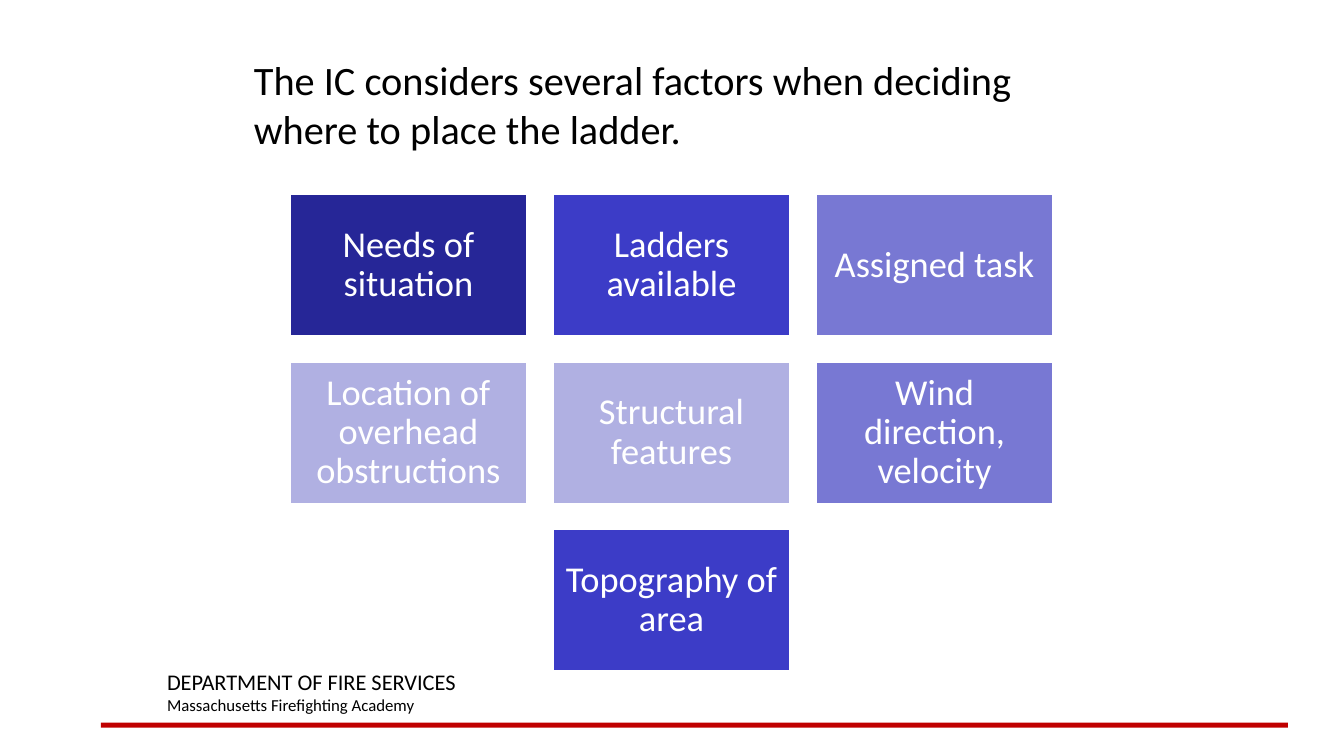
"""Build the slide on factors in placing a ladder."""
import pptx
import pptx.util
import pptx.dml.color
import pptx.enum.shapes
import pptx.enum.text

Cm = pptx.util.Cm
Pt = pptx.util.Pt
ALIGN = pptx.enum.text.PP_ALIGN
ANCHOR = pptx.enum.text.MSO_ANCHOR

TITLE = "The IC considers several factors when deciding where to place the ladder."
ROWS = [
    [("Needs of situation", "navy"), ("Ladders available", "blue"), ("Assigned task", "mid")],
    [("Location of overhead obstructions", "pale"), ("Structural features", "pale"),
     ("Wind direction, velocity", "mid")],
    [("Topography of area", "blue")],
]
FOOT = [("DEPARTMENT OF FIRE SERVICES", "head"), ("Massachusetts Firefighting Academy", "small")]

THEME = {
    "font": "Calibri",
    "color": {"black": "000000", "white": "FFFFFF", "red": "C00000", "navy": "262697",
              "blue": "3C3CC7", "mid": "7878D3", "pale": "B0B0E2"},
    "size": {"title": 28.8, "card": 26, "head": 16, "small": 12},
}

WIDE, HIGH = 33.87, 19.05
COLS = 3
LEFT, TOP = 7.29, 4.88
CARD_W, CARD_H, GAP_X, GAP_Y = 6.01, 3.61, 0.62, 0.61


def color(name):
    """Return the theme color of this name."""
    return pptx.dml.color.RGBColor.from_string(THEME["color"][name])


def write(shape, lines, ink="black", align=ALIGN.LEFT, anchor=ANCHOR.TOP,
          inset=(0.25, 0.13, 0.25, 0.13), pitch=None):
    """Fill a shape with lines of (text, size name)."""
    frame = shape.text_frame
    frame.word_wrap = True
    frame.vertical_anchor = anchor
    (frame.margin_left, frame.margin_top,
     frame.margin_right, frame.margin_bottom) = map(Cm, inset)
    for i, (text, size) in enumerate(lines):
        para = frame.add_paragraph() if i else frame.paragraphs[0]
        para.alignment = align
        para.line_spacing = pitch
        run = para.add_run()
        run.text = text
        run.font.name = THEME["font"]
        run.font.size = Pt(THEME["size"][size])
        run.font.color.rgb = color(ink)


def block(slide, box, fill, line=None):
    """Add a plain box with an optional line color."""
    shape = slide.shapes.add_shape(pptx.enum.shapes.MSO_SHAPE.RECTANGLE, *map(Cm, box))
    shape.shadow.inherit = False
    shape.fill.solid()
    shape.fill.fore_color.rgb = color(fill)
    if line:
        shape.line.color.rgb = color(line)
        shape.line.width = Pt(2)
    else:
        shape.line.fill.background()
    return shape


def main():
    """Make the slide and save it."""
    deck = pptx.Presentation()
    deck.slide_width, deck.slide_height = Cm(WIDE), Cm(HIGH)
    slide = deck.slides.add_slide(deck.slide_layouts[6])

    block(slide, (2.54, 18.21, 29.92, 0.13), "red")
    foot = slide.shapes.add_textbox(Cm(3.96), Cm(16.71), Cm(14.4), Cm(1.45))
    write(foot, FOOT)
    title = slide.shapes.add_textbox(Cm(6.15), Cm(1.27), Cm(22.2), Cm(2.54))
    write(title, [(TITLE, "title")], inset=(0.25, 0.13, 0.8, 0.13))

    for r, row in enumerate(ROWS):
        start = LEFT + (COLS - len(row)) * (CARD_W + GAP_X) / 2
        for c, (text, fill) in enumerate(row):
            box = (start + c * (CARD_W + GAP_X), TOP + r * (CARD_H + GAP_Y), CARD_W, CARD_H)
            card = block(slide, box, fill, "white")
            write(card, [(text, "card")], ink="white", align=ALIGN.CENTER,
                  anchor=ANCHOR.MIDDLE, inset=(0.28,) * 4, pitch=0.9)

    deck.save("out.pptx")


if __name__ == "__main__":
    main()
